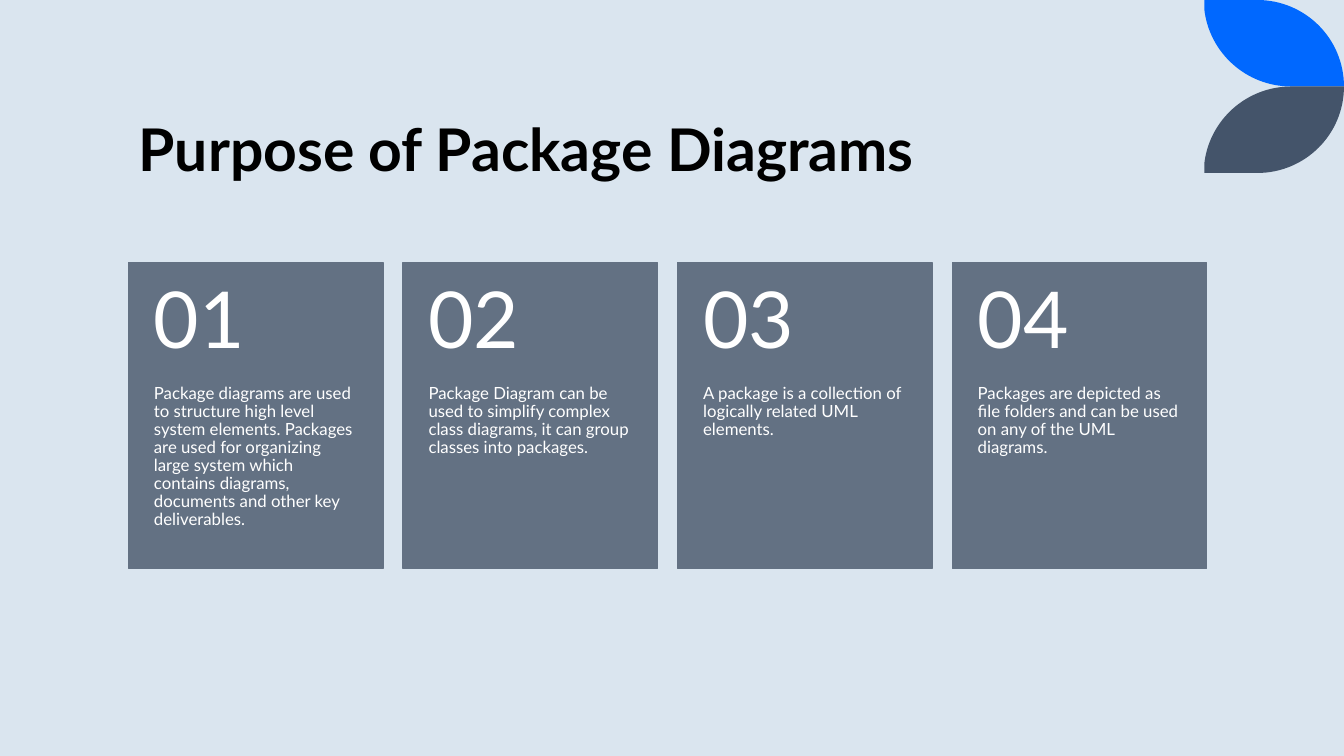
from dataclasses import dataclass

from lxml import etree
from pptx import Presentation
from pptx import util as u
from pptx.dml.color import RGBColor
from pptx.enum import shapes, text
from pptx.oxml import ns


@dataclass(frozen=True)
class Theme:
    font: str = "Lato"
    background: str = "DAE5EF"
    title: str = "000000"
    card: str = "637183"
    card_text: str = "FFFFFF"
    upper_leaf: str = "0068FF"
    lower_leaf: str = "44546A"
    title_size: int = 42
    number_size: int = 56
    body_size: int = 12


THEME = Theme()
SLIDE_WIDTH, SLIDE_HEIGHT = 33.87, 19.05
LEFT = 3.24
CARD_TOP, CARD_WIDTH, CARD_HEIGHT, CARD_PITCH = 6.62, 6.41, 7.71, 6.92
NUMBER_HEIGHT = 3.07
LEAF_WIDTH, LEAF_HEIGHT = 3.52, 2.18

LEAF_CORNERS = [(0, 0), (1.33, 0), (LEAF_WIDTH, LEAF_HEIGHT), (2.19, LEAF_HEIGHT), (0, 0.23)]
# Control points of the curved edges, by the number of the edge
LEAF_CURVES = {1: [(2.54, 0), (LEAF_WIDTH, 0.97)], 3: [(1.05, LEAF_HEIGHT), (0.12, 1.32)]}

PURPOSES = [
    "Package diagrams are used to structure high level system elements. "
    "Packages are used for organizing large system which contains diagrams, "
    "documents and other key deliverables.",
    "Package Diagram can be used to simplify complex class diagrams, "
    "it can group classes into packages.",
    "A package is a collection of logically related UML elements.",
    "Packages are depicted as file folders and can be used on any of the UML diagrams.",
]


def paint(fill, color):
    fill.solid()
    fill.fore_color.rgb = RGBColor.from_string(color)


def write(frame, content, size, color, spacing, anchor, bold=False):
    """Put one formatted paragraph into a text frame."""
    frame.text = content
    frame.word_wrap = True
    frame.auto_size = text.MSO_AUTO_SIZE.NONE
    frame.vertical_anchor = anchor
    paragraph = frame.paragraphs[0]
    paragraph.alignment = text.PP_ALIGN.LEFT
    paragraph.line_spacing = spacing
    font = paragraph.runs[0].font
    font.name, font.size, font.bold = THEME.font, u.Pt(size), bold
    font.color.rgb = RGBColor.from_string(color)


def add_title(slide, content):
    title = slide.shapes.title
    title.left, title.top = u.Cm(LEFT), u.Cm(0.36)
    title.width, title.height = u.Cm(27.15), u.Cm(4.37)
    write(title.text_frame, content, THEME.title_size, THEME.title, 0.8,
          text.MSO_ANCHOR.BOTTOM, bold=True)


def bend(edge, controls):
    """Turn a straight outline edge into a Bezier curve."""
    edge.tag = ns.qn("a:cubicBezTo")
    for position, (x, y) in enumerate(controls):
        point = etree.Element(ns.qn("a:pt"), x=str(u.Cm(x)), y=str(u.Cm(y)))
        edge.insert(position, point)


def add_leaf(group, color, flipped=False):
    """Draw a leaf in the corner, or its mirror image below it."""
    def place(points):
        return [(x, LEAF_HEIGHT - y if flipped else y) for x, y in points]

    left, top = SLIDE_WIDTH - LEAF_WIDTH, LEAF_HEIGHT if flipped else 0
    corners = [(u.Cm(left + x), u.Cm(top + y)) for x, y in place(LEAF_CORNERS)]
    builder = group.shapes.build_freeform(*corners[0])
    builder.add_line_segments(corners[1:], close=True)
    leaf = builder.convert_to_shape()
    edges = list(leaf._element.iter(ns.qn("a:lnTo")))
    for number, controls in LEAF_CURVES.items():
        bend(edges[number], place(controls))
    leaf.shadow.inherit = False
    paint(leaf.fill, color)
    leaf.line.fill.background()


def add_card_text(group, left, top, height, content, size, insets, anchor):
    box = group.shapes.add_textbox(u.Cm(left), u.Cm(top), u.Cm(CARD_WIDTH), u.Cm(height))
    frame = box.text_frame
    frame.margin_left = frame.margin_right = u.Cm(0.64)
    frame.margin_top, frame.margin_bottom = (u.Cm(inset) for inset in insets)
    write(frame, content, size, THEME.card_text, 0.9, anchor)


def add_card(group, index, purpose):
    left = LEFT + index * CARD_PITCH
    panel = group.shapes.add_shape(shapes.MSO_SHAPE.RECTANGLE, u.Cm(left), u.Cm(CARD_TOP),
                                   u.Cm(CARD_WIDTH), u.Cm(CARD_HEIGHT))
    panel.shadow.inherit = False
    paint(panel.fill, THEME.card)
    paint(panel.line.fill, THEME.card)
    panel.line.width = u.Pt(1)
    add_card_text(group, left, CARD_TOP + NUMBER_HEIGHT, CARD_HEIGHT - NUMBER_HEIGHT,
                  purpose, THEME.body_size, (0, 0.91), text.MSO_ANCHOR.TOP)
    add_card_text(group, left, CARD_TOP, NUMBER_HEIGHT, f"{index + 1:02}",
                  THEME.number_size, (0.46, 0.46), text.MSO_ANCHOR.MIDDLE)


def main():
    presentation = Presentation()
    presentation.slide_width = u.Cm(SLIDE_WIDTH)
    presentation.slide_height = u.Cm(SLIDE_HEIGHT)
    slide = presentation.slides.add_slide(presentation.slide_layouts.get_by_name("Title Only"))
    paint(slide.background.fill, THEME.background)
    leaves = slide.shapes.add_group_shape()
    add_leaf(leaves, THEME.upper_leaf)
    add_leaf(leaves, THEME.lower_leaf, flipped=True)
    add_title(slide, "Purpose of Package Diagrams")
    cards = slide.shapes.add_group_shape()
    for index, purpose in enumerate(PURPOSES):
        add_card(cards, index, purpose)
    presentation.save("out.pptx")


if __name__ == "__main__":
    main()
